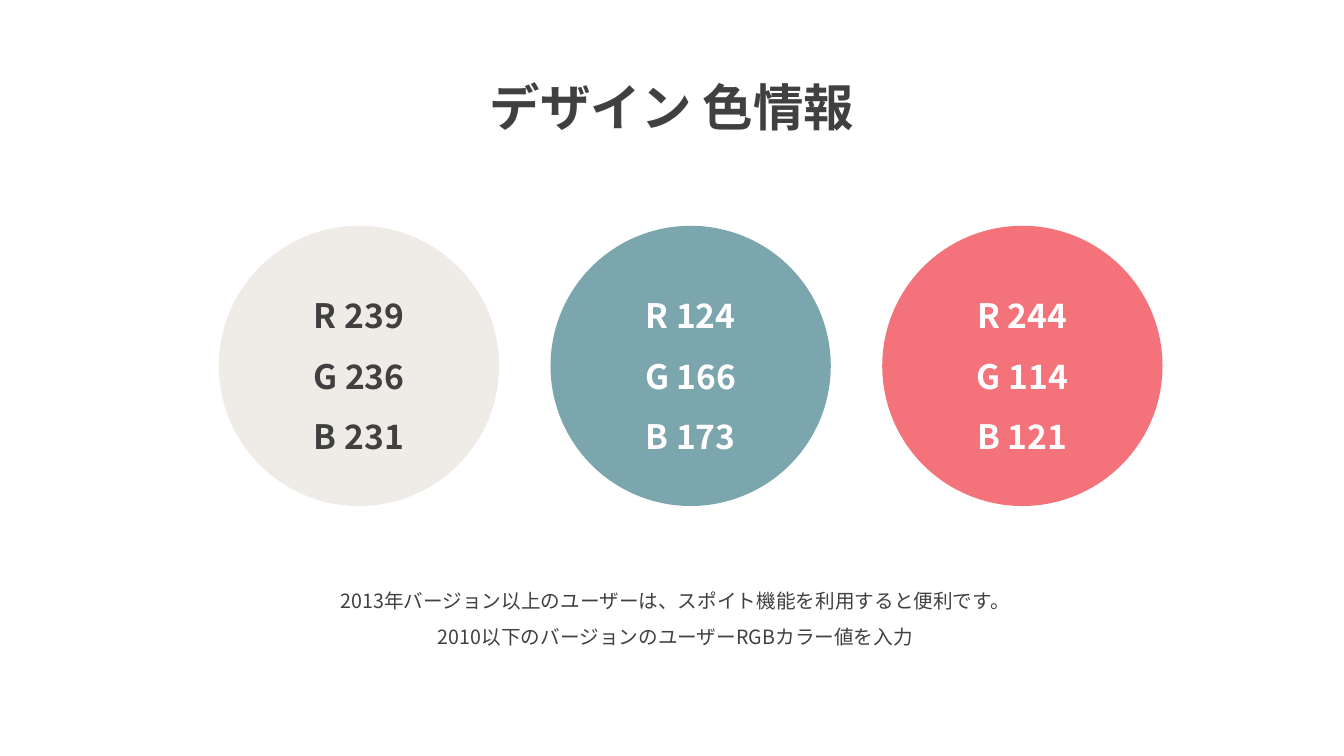
from dataclasses import dataclass

from lxml import etree
from pptx import Presentation
from pptx.dml.color import RGBColor
from pptx.enum.shapes import MSO_SHAPE
from pptx.enum.text import MSO_ANCHOR, MSO_AUTO_SIZE, PP_ALIGN
from pptx.oxml.ns import qn
from pptx.slide import Slide
from pptx.text.text import TextFrame
from pptx.util import Inches, Pt

OVAL = MSO_SHAPE.OVAL
TOP, MIDDLE = MSO_ANCHOR.TOP, MSO_ANCHOR.MIDDLE
CENTER = PP_ALIGN.CENTER
NO_FIT = MSO_AUTO_SIZE.NONE

FONT = "Noto Sans CJK KR"
COLORS = {
    "sand": "EFECE7",
    "teal": "7CA6AD",
    "coral": "F47279",
    "dark": "404040",
    "white": "FFFFFF",
}
LEFT, STEP, SIZE = 2.17, 3.29, 2.78


@dataclass
class Swatch:
    fill: str
    ink: str


SWATCHES = [
    Swatch("sand", "dark"),
    Swatch("teal", "white"),
    Swatch("coral", "white"),
]


def color(name: str) -> RGBColor:
    return RGBColor.from_string(COLORS[name])


def write(frame: TextFrame, text: str, size: int, ink: str,
          bold: bool = False, anchor: MSO_ANCHOR = TOP) -> None:
    """Fill a frame with centred lines in the deck's font."""
    frame.text = text
    frame.word_wrap = True
    frame.auto_size = NO_FIT
    frame.vertical_anchor = anchor
    for line in frame.paragraphs:
        line.alignment = CENTER
        line.line_spacing = 1.5
        for run in line.runs:
            font = run.font
            font.name, font.size, font.bold = FONT, Pt(size), bold
            font.color.rgb = color(ink)
            # Japanese glyphs take the East Asian typeface
            latin = run._r.rPr.find(qn("a:latin"))
            asian = etree.Element(qn("a:ea"), typeface=FONT)
            latin.addnext(asian)


def draw_swatch(slide: Slide, swatch: Swatch, left: float) -> None:
    """Draw a circle labelled with the values of its own fill."""
    disc = slide.shapes.add_shape(
        OVAL, Inches(left), Inches(2.24), Inches(SIZE), Inches(SIZE))
    disc.shadow.inherit = False
    disc.fill.solid()
    disc.fill.fore_color.rgb = color(swatch.fill)
    disc.line.fill.background()
    label = "\n".join(f"{key} {val}" for key, val in zip("RGB", color(swatch.fill)))
    write(disc.text_frame, label, 24, swatch.ink, True, MIDDLE)


def main() -> None:
    deck = Presentation()
    deck.slide_width, deck.slide_height = Inches(13.33), Inches(7.5)
    slide = deck.slides.add_slide(deck.slide_layouts[5])

    # Title
    title = slide.shapes.title
    title.left, title.top = Inches(4.24), Inches(0.4)
    title.width, title.height = Inches(4.85), Inches(0.91)
    write(title.text_frame, "デザイン 色情報", 36, "dark", True)

    # Colour circles
    for i, swatch in enumerate(SWATCHES):
        draw_swatch(slide, swatch, LEFT + i * STEP)

    # Usage note
    note = slide.shapes.add_textbox(
        Inches(2.52), Inches(5.68), Inches(8.36), Inches(0.77))
    write(note.text_frame,
          "2013年バージョン以上のユーザーは、スポイト機能を利用すると便利です。\n"
          "2010以下のバージョンのユーザーRGBカラー値を入力", 14, "dark")

    deck.save("out.pptx")


if __name__ == "__main__":
    main()
